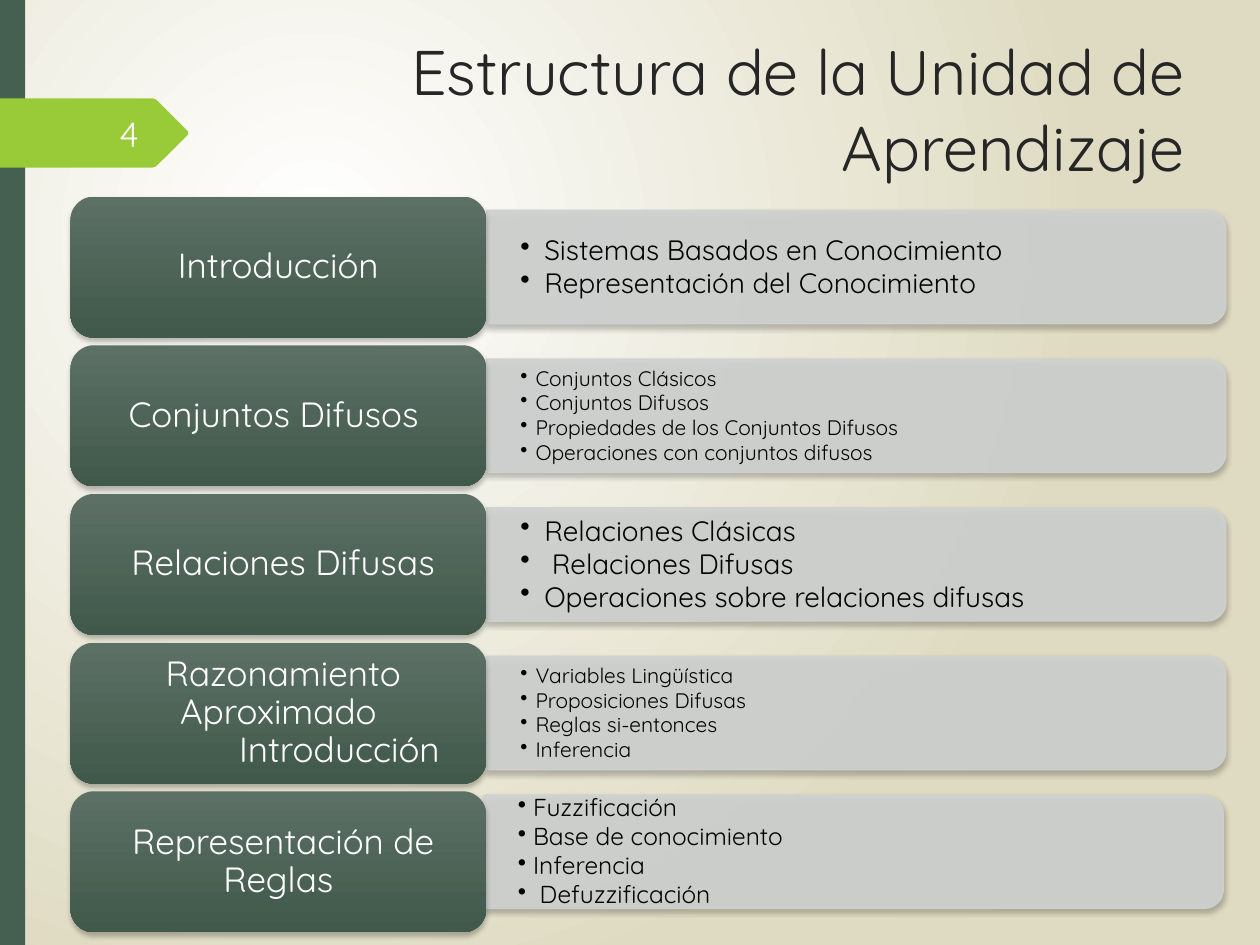
"""Builds the slide that outlines the five topics of the learning unit."""
from pptx import Presentation
from pptx.dml.color import RGBColor as Rgb
from pptx.enum.shapes import MSO_SHAPE as Kind
from pptx.enum.text import MSO_ANCHOR as Anchor, PP_ALIGN as Align
from pptx.oxml import parse_xml
from pptx.oxml.ns import nsdecls, qn
from pptx.util import Inches, Pt

TITLE = "Estructura de la Unidad de Aprendizaje"
PAGE = "4"
TOPICS = [
    ("Introducción", 16, 0.19,
     ["Sistemas Basados en Conocimiento", "Representación del Conocimiento"]),
    ("Conjuntos Difusos ", 12, 0.12,
     ["Conjuntos Clásicos", "Conjuntos Difusos",
      "Propiedades de los Conjuntos Difusos", "Operaciones con conjuntos difusos"]),
    (" Relaciones Difusas", 16, 0.19,
     ["Relaciones Clásicas", " Relaciones Difusas",
      "Operaciones sobre relaciones difusas"]),
    (" Razonamiento Aproximado\nIntroducción", 12, 0.12,
     ["Variables Lingüística", "Proposiciones Difusas", "Reglas si-entonces",
      "Inferencia"]),
    (" Representación de Reglas", 14, 0.12,
     ["Fuzzificación", "Base de conocimiento", "Inferencia", " Defuzzificación"]),
]
COLORS = {"white": "FFFFFF", "sand": "DFDBC2", "bar": "455F51", "tag": "99CB38",
          "title": "262626", "panel": "CFD2D0", "top": "5C7065", "base": "40594B",
          "text": "000000", "page": "FEFFFF"}
FONT = "Quicksand"
WIDE, HIGH = 10, 7.5
LEFT, TOP, STEP = 0.56, 1.56, 1.18
LABEL_W, LABEL_H = 3.3, 1.12
PANEL_W, PANEL_H = 5.87, 0.9
NUDGES = {4: (-0.02, -0.08)}


def rgb(name):
    return Rgb.from_string(COLORS[name])


def blend(fill, first, last):
    fill.gradient()
    for stop, name, place in zip(fill.gradient_stops, (first, last), (0, 1)):
        stop.color.rgb = rgb(name)
        stop.position = place


def write(shape, text, size=20, color="white", align=Align.LEFT, inset=(0.1, 0.05),
          bullet=0, later=0, lead=0.9):
    frame = shape.text_frame
    frame.word_wrap = True
    frame.vertical_anchor = Anchor.MIDDLE
    frame.margin_left = frame.margin_right = Inches(inset[0])
    frame.margin_top = frame.margin_bottom = Inches(inset[1])
    frame.text = text
    for rank, para in enumerate(frame.paragraphs):
        para.alignment, para.line_spacing = align, lead
        para.font.name, para.font.size = FONT, Pt(size)
        para.font.color.rgb = rgb(color)
        props = para._p.get_or_add_pPr()
        if bullet:
            para.space_after = Pt(size / 10)
            props.set("marL", str(Inches(bullet)))
            props.set("indent", str(-Inches(bullet)))
            mark = parse_xml(f'<a:buChar {nsdecls("a")} char="•"/>')
            props.insert_element_before(mark, "a:tabLst", "a:defRPr", "a:extLst")
        elif rank:
            props.set("marL", str(Inches(later)))


def box(shapes, x, y, w, h, text, **style):
    area = shapes.add_textbox(Inches(x), Inches(y), Inches(w), Inches(h))
    write(area, text, **style)


def block(shapes, kind, x, y, w, h, fill=None):
    shape = shapes.add_shape(kind, Inches(x), Inches(y), Inches(w), Inches(h))
    shape.shadow.inherit = False
    shape.line.fill.background()
    if fill:
        shape.fill.solid()
        shape.fill.fore_color.rgb = rgb(fill)
    return shape


def shade(shape):
    glow = parse_xml(
        f'<a:outerShdw {nsdecls("a")} blurRad="{Pt(3)}" dist="{Pt(2)}" dir="5400000" '
        'rotWithShape="0"><a:srgbClr val="000000"><a:alpha val="25000"/>'
        '</a:srgbClr></a:outerShdw>')
    shape._element.spPr.find(qn("a:effectLst")).append(glow)


def panel(shapes, x, y):
    shape = block(shapes, Kind.ROUND_2_SAME_RECTANGLE, x + (PANEL_W - PANEL_H) / 2,
                  y + (PANEL_H - PANEL_W) / 2, PANEL_H, PANEL_W, "panel")
    shape.rotation = 90
    shape.line.color.rgb = rgb("panel")
    shape.line.width = Pt(0.75)
    for tint in shape._element.spPr.iter(qn("a:srgbClr")):
        tint.append(parse_xml(f'<a:alpha {nsdecls("a")} val="90000"/>'))
    shade(shape)


def backdrop(slide):
    blend(slide.background.fill, "white", "sand")
    line = next(slide.element.iter(qn("a:lin")))
    line.getparent().replace(line, parse_xml(
        f'<a:path {nsdecls("a")} path="circle"><a:fillToRect l="50000" t="50000" '
        'r="100000" b="100000"/></a:path>'))


def tag(shapes):
    edge = [(1.21, 0.78), (1.24, 0.79), (1.49, 1.04), (1.49, 1.07), (1.24, 1.32),
            (1.21, 1.33), (0, 1.33)]
    path = shapes.build_freeform(0, Inches(0.78), scale=1.0)
    path.add_line_segments([(Inches(x), Inches(y)) for x, y in edge], close=True)
    shape = path.convert_to_shape()
    shape.shadow.inherit = False
    shape.fill.solid()
    shape.fill.fore_color.rgb = rgb("tag")
    shape.line.fill.background()


def main():
    deck = Presentation()
    deck.slide_width, deck.slide_height = Inches(WIDE), Inches(HIGH)
    slide = deck.slides.add_slide(deck.slide_layouts[6])
    shapes = slide.shapes
    backdrop(slide)
    block(shapes, Kind.RECTANGLE, 0, 0, WIDE / 50, HIGH, "bar")
    tag(shapes)
    box(shapes, 2.29, 0.16, 7.21, 1.4, TITLE, size=36, color="title",
        align=Align.RIGHT, lead=1)
    for row, (name, size, dent, items) in enumerate(TOPICS):
        y = TOP + row * STEP
        dx, dy = NUDGES.get(row, (0, 0))
        x, mid = LEFT + LABEL_W + dx, y + (LABEL_H - PANEL_H) / 2 + dy
        panel(shapes, x, mid)
        box(shapes, x, mid + 0.05, PANEL_W - 0.05, PANEL_H - 0.09, "\n".join(items),
            size=size, color="text", inset=(0.27, 0.14), bullet=dent)
        label = block(shapes, Kind.ROUNDED_RECTANGLE, LEFT, y, LABEL_W, LABEL_H)
        blend(label.fill, "top", "base")
        label.fill.gradient_angle = 270
        shade(label)
        write(label, name, align=Align.CENTER, inset=(0.08, 0.04), later=0.97)
    box(shapes, LEFT, 0.86, 0.64, 0.4, PAGE, color="page", align=Align.RIGHT, lead=1)
    deck.save("out.pptx")


if __name__ == "__main__":
    main()
